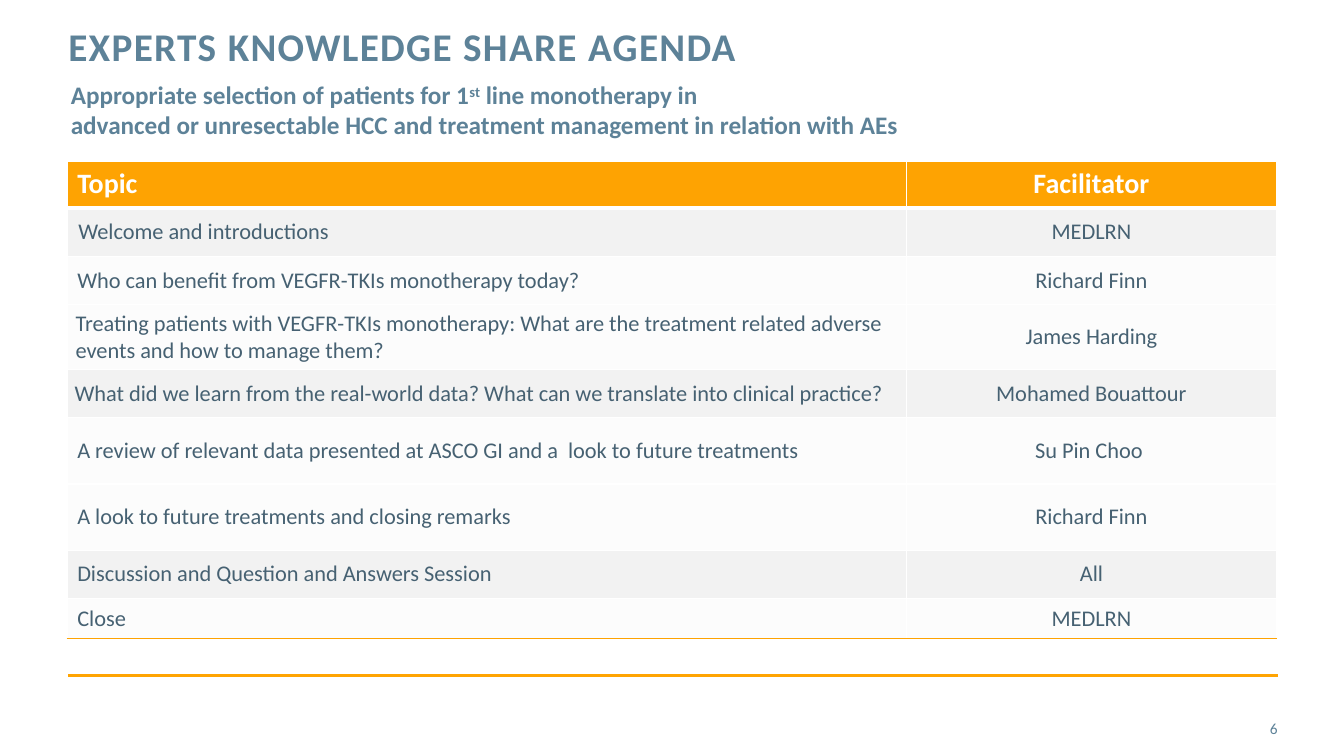
from lxml import etree
from pptx import Presentation
from pptx.dml.color import RGBColor
from pptx.enum.shapes import MSO_CONNECTOR
from pptx.enum.text import MSO_ANCHOR, MSO_AUTO_SIZE, PP_ALIGN
from pptx.oxml.ns import qn
from pptx.util import Emu, Pt

PX = 9525
FONT = "Calibri"
BLUE = RGBColor(0x5D, 0x82, 0x98)
SLATE = RGBColor(0x46, 0x61, 0x72)
ORANGE = RGBColor(0xFE, 0xA3, 0x02)
RULE_ORANGE = RGBColor(0xFF, 0xA4, 0x02)
GREY = RGBColor(0xF2, 0xF2, 0xF2)
WHITE = RGBColor(0xFF, 0xFF, 0xFF)
LEFT, CENTER, RIGHT = PP_ALIGN.LEFT, PP_ALIGN.CENTER, PP_ALIGN.RIGHT
TOP, MIDDLE = MSO_ANCHOR.TOP, MSO_ANCHOR.MIDDLE
NO_AUTOFIT = MSO_AUTO_SIZE.NONE
STRAIGHT = MSO_CONNECTOR.STRAIGHT

COLUMN_WIDTHS = [799, 353]
AGENDA = [
    ("Topic", "Facilitator", 44),
    ("Welcome and introductions", "MEDLRN", 46),
    ("Who can benefit from VEGFR-TKIs monotherapy today?", "Richard Finn", 46),
    ("Treating patients with VEGFR-TKIs monotherapy: What are the treatment related "
     "adverse events and how to manage them?", "James Harding", 62),
    ("What did we learn from the real-world data? What can we translate into "
     "clinical practice?", "Mohamed Bouattour", 46),
    ("A review of relevant data presented at ASCO GI and a  look to future treatments",
     "Su Pin Choo ", 63),
    ("A look to future treatments and closing remarks", "Richard Finn", 63),
    ("Discussion and Question and Answers Session", "All", 46),
    ("Close", "MEDLRN", 38),
]
SOLID_ROWS = {1, 4, 7}
NARROW_MARGIN_ROWS = {3, 4}
INDENTED_ROWS = {1, 3}
LAST_ROW = len(AGENDA) - 1


def format_font(paragraph, size, color, bold=False):
    paragraph.font.name = FONT
    paragraph.font.size = Pt(size)
    paragraph.font.bold = bold
    paragraph.font.color.rgb = color


def set_borders(cell, borders):
    properties = cell._tc.get_or_add_tcPr()
    for position, (side, color, width) in enumerate(borders):
        line = etree.Element(qn(f"a:ln{side}"), w=str(Pt(width)))
        fill = etree.SubElement(line, qn("a:solidFill"))
        etree.SubElement(fill, qn("a:srgbClr"), val=str(color))
        properties.insert(position, line)


presentation = Presentation()
presentation.slide_width = Emu(1280 * PX)
presentation.slide_height = Emu(720 * PX)
slide = presentation.slides.add_slide(presentation.slide_layouts[5])

rule = slide.shapes.add_connector(STRAIGHT, 65 * PX, 643 * PX, 1217 * PX, 643 * PX)
rule.line.color.rgb = RULE_ORANGE
rule.line.width = Pt(2)
etree.SubElement(rule._element.spPr, qn("a:effectLst"))

title = slide.shapes.title
title.left, title.top, title.width, title.height = 65 * PX, 26 * PX, 918 * PX, 84 * PX
page_number = slide.shapes.add_textbox(1134 * PX, 675 * PX, 83 * PX, 38 * PX)
for shape, text, anchor, alignment, size, bold in [
    (title, "EXPERTS KNOWLEDGE SHARE AGENDA", TOP, LEFT, 28, True),
    (page_number, "6", MIDDLE, RIGHT, 11, False),
]:
    frame = shape.text_frame
    frame.auto_size = NO_AUTOFIT
    frame.word_wrap = True
    frame.vertical_anchor = anchor
    frame.margin_left = frame.margin_top = frame.margin_right = frame.margin_bottom = 0
    frame.text = text
    paragraph = frame.paragraphs[0]
    paragraph.alignment = alignment
    format_font(paragraph, size, BLUE, bold)
title_paragraph = title.text_frame.paragraphs[0]
title_paragraph.line_spacing = Pt(30)
title_paragraph.runs[0].font._element.set("spc", "100")

table_height = sum(height for _, _, height in AGENDA)
table = slide.shapes.add_table(
    len(AGENDA), 2, 64 * PX, 154 * PX, sum(COLUMN_WIDTHS) * PX, table_height * PX
).table
table.horz_banding = False
for column, width in zip(table.columns, COLUMN_WIDTHS):
    column.width = Emu(width * PX)

for row_index, (topic, facilitator, height) in enumerate(AGENDA):
    table.rows[row_index].height = Emu(height * PX)
    header = row_index == 0
    for column_index, text in enumerate((topic, facilitator)):
        cell = table.cell(row_index, column_index)
        cell.text = text
        cell.vertical_anchor = TOP if header else MIDDLE
        paragraph = cell.text_frame.paragraphs[0]
        paragraph.alignment = CENTER if column_index else LEFT
        if column_index == 0 and row_index in NARROW_MARGIN_ROWS:
            cell.margin_left = cell.margin_right = Emu(7 * PX)
        if column_index == 0 and row_index in INDENTED_ROWS:
            paragraph._p.get_or_add_pPr().set("marL", str(PX))
        format_font(paragraph, 20 if header else 16, WHITE if header else SLATE, header)

        cell.fill.solid()
        cell.fill.fore_color.rgb = ORANGE if header else GREY
        if not header and row_index not in SOLID_ROWS:
            color = cell._tc.tcPr.find(".//" + qn("a:srgbClr"))
            etree.SubElement(color, qn("a:alpha"), val="20000")
        set_borders(cell, [
            ("L", WHITE, 1),
            ("R", WHITE, 1),
            ("T", WHITE, 3 if row_index == 1 else 1),
            ("B", ORANGE if row_index == LAST_ROW else WHITE, 3 if header else 1),
        ])

subtitle = slide.shapes.add_textbox(58 * PX, 71 * PX, 960 * PX, 97 * PX)
frame = subtitle.text_frame
frame.word_wrap = True
first_line = frame.paragraphs[0]
for text in ("Appropriate selection of patients for 1", "st", " line monotherapy in"):
    run = first_line.add_run()
    run.text = text
    if text == "st":
        run.font._element.set("baseline", "30000")
second_line = frame.add_paragraph()
second_line.text = "advanced or unresectable HCC and treatment management in relation with AEs"
for paragraph in frame.paragraphs:
    format_font(paragraph, 18, BLUE, True)

presentation.save("out.pptx")
